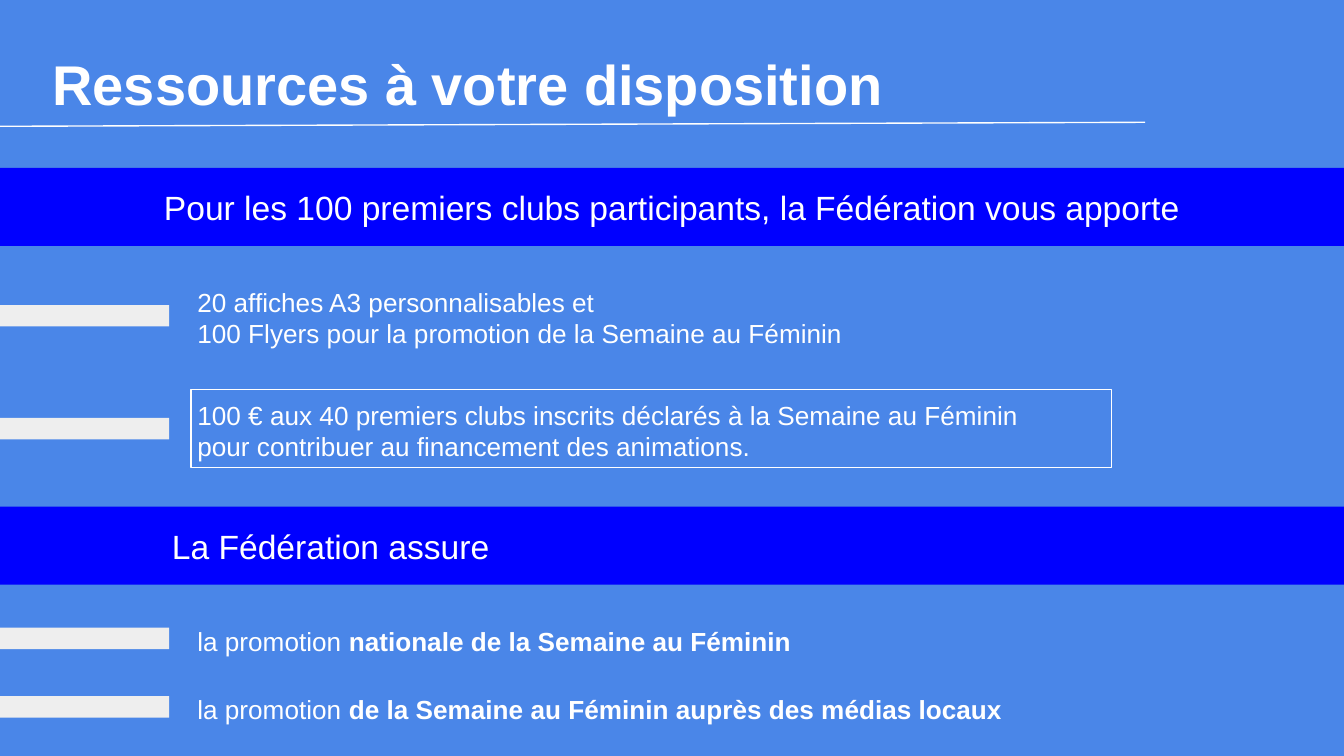
from lxml.etree import SubElement
from pptx import Presentation
from pptx.dml.color import RGBColor
from pptx.enum.shapes import MSO_CONNECTOR as CONNECTOR, MSO_SHAPE as SHAPE
from pptx.enum.text import MSO_ANCHOR as ANCHOR, MSO_AUTO_SIZE as AUTO_SIZE, PP_ALIGN as ALIGN
from pptx.oxml.ns import qn
from pptx.util import Pt

PX = 9144  # 100 px to the inch
COLORS = {"background": "4A86E8", "banner": "0000FF", "marker": "EEEEEE", "white": "FFFFFF"}


def write_text(shape, paragraphs, size, align=ALIGN.LEFT, anchor=ANCHOR.TOP, left_inset=10):
    """Fill a shape with paragraphs, each a list of (text, bold) runs."""
    frame = shape.text_frame
    frame.word_wrap = True
    frame.auto_size = AUTO_SIZE.NONE
    frame.vertical_anchor = anchor
    frame.margin_left = left_inset * PX
    frame.margin_top = frame.margin_right = frame.margin_bottom = 10 * PX
    for index, runs in enumerate(paragraphs):
        paragraph = frame.add_paragraph() if index else frame.paragraphs[0]
        paragraph.alignment = align
        for text, bold in runs:
            run = paragraph.add_run()
            run.text = text
            run.font.name = "Arial"
            run.font.size = Pt(size)
            run.font.bold = bold
            run.font.color.rgb = RGBColor.from_string(COLORS["white"])


def add_rectangle(left, top, width, height, fill=None):
    """Add a filled rectangle, or a thin white frame when no fill is given."""
    rectangle = slide.shapes.add_shape(
        SHAPE.RECTANGLE, left * PX, top * PX, width * PX, height * PX)
    rectangle.shadow.inherit = False
    if fill:
        rectangle.fill.solid()
        rectangle.fill.fore_color.rgb = RGBColor.from_string(COLORS[fill])
        rectangle.line.fill.background()
    else:
        rectangle.fill.background()
        rectangle.line.color.rgb = RGBColor.from_string(COLORS["white"])
        rectangle.line.width = Pt(0.75)
    return rectangle


prs = Presentation()
prs.slide_width = 1000 * PX
prs.slide_height = prs.slide_width * 9 // 16
slide = prs.slides.add_slide(prs.slide_layouts[5])
slide.background.fill.solid()
slide.background.fill.fore_color.rgb = RGBColor.from_string(COLORS["background"])

# Title and its underline
title = slide.shapes.title
title.left, title.top, title.width, title.height = 29 * PX, 27 * PX, 942 * PX, 101 * PX
write_text(title, [[("Ressources à votre disposition", True)]], 30)

underline = slide.shapes.add_connector(CONNECTOR.STRAIGHT, 0, 94 * PX, 852 * PX, 91 * PX)
underline.line.color.rgb = RGBColor.from_string(COLORS["white"])
underline.line.width = Pt(0.75)
SubElement(underline._element.spPr, qn("a:effectLst"))

# Section banners
banners = [
    (125, "Pour les 100 premiers clubs participants, la Fédération vous apporte", ALIGN.CENTER, 10),
    (377, "La Fédération assure", ALIGN.LEFT, 128),
]
for top, heading, align, left_inset in banners:
    banner = add_rectangle(0, top, 1000, 58, "banner")
    write_text(banner, [[(heading, False)]], 18, align, ANCHOR.MIDDLE, left_inset)

# Resources, each with a marker at the left edge
resources = [
    (203, 64, [[("20 affiches A3 personnalisables et", False)],
               [("100 Flyers pour la promotion de la Semaine au Féminin", False)]]),
    (287, 64, [[("100 € aux 40 premiers clubs inscrits déclarés à la Semaine au Féminin", False)],
               [("pour contribuer au financement des animations.", False)]]),
    (455, 39, [[("la promotion ", False), ("nationale de la Semaine au Féminin", True)]]),
    (506, 39, [[("la promotion ", False),
                ("de la Semaine au Féminin auprès des médias locaux", True)]]),
]
for top, height, lines in resources:
    add_rectangle(0, top + 12 * len(lines), 126, 16, "marker")
    resource = slide.shapes.add_textbox(137 * PX, top * PX, 834 * PX, height * PX)
    write_text(resource, lines, 14)

# Frame around the financial aid
add_rectangle(142, 290, 685, 58)

prs.save("out.pptx")
